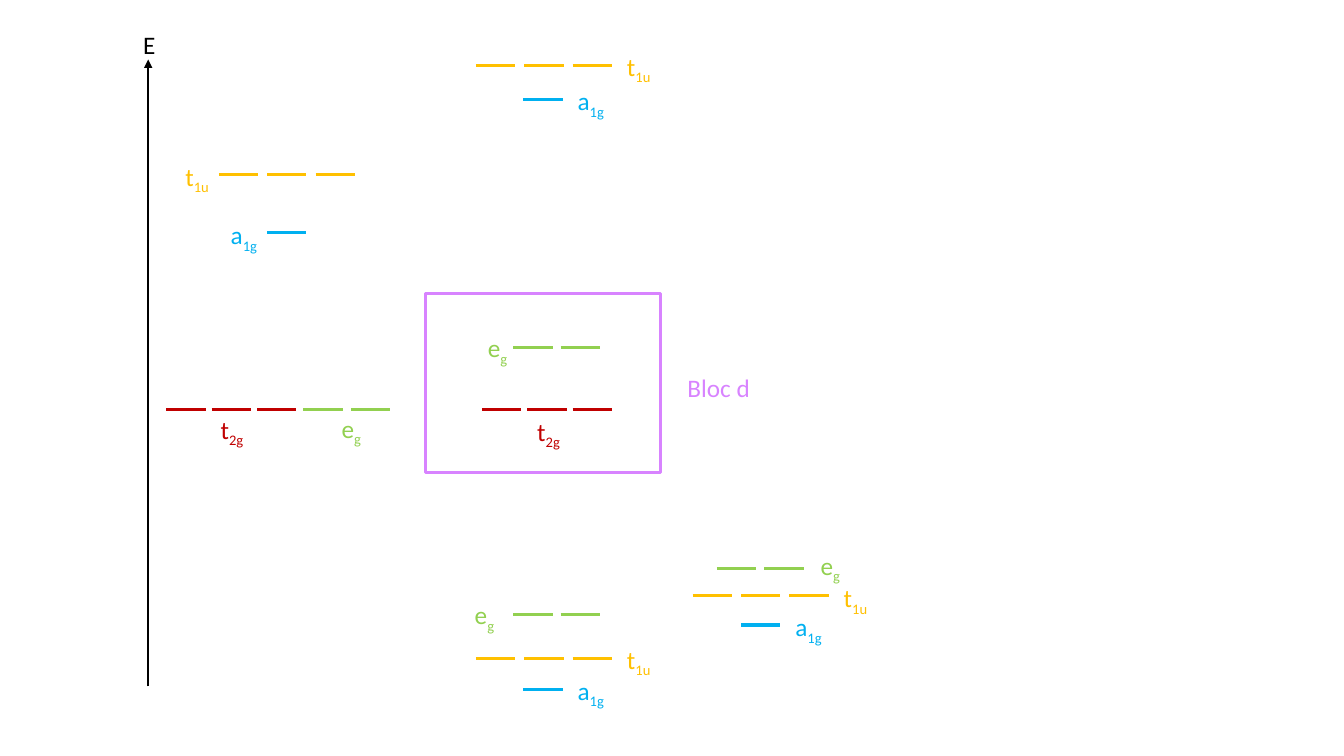
from enum import Enum
from typing import NamedTuple

from pptx import Presentation
from pptx.dml.color import RGBColor
from pptx.enum import shapes, text
from pptx.oxml import ns
from pptx.shapes import connector as c
from pptx.slide import Slide
from pptx.util import Inches, Pt
from lxml import etree

BLACK = RGBColor(0x00, 0x00, 0x00)
RED = RGBColor(0xC0, 0x00, 0x00)
GREEN = RGBColor(0x92, 0xD0, 0x50)
BLUE = RGBColor(0x00, 0xB0, 0xF0)
YELLOW = RGBColor(0xFF, 0xC0, 0x00)
PURPLE = RGBColor(0xD8, 0x83, 0xFF)

ORBITAL_LENGTH = 0.39
LABEL_HEIGHT = 0.4
LEVEL_WEIGHT = 2.25


class SymmetryStyle(NamedTuple):
    letter: str
    subscript: str
    color: RGBColor
    degeneracy: int
    pitch: float
    label_width: float


class Symmetry(Enum):
    A1G = SymmetryStyle("a", "1g", BLUE, 1, 0, 0.49)
    T1U = SymmetryStyle("t", "1u", YELLOW, 3, 0.48, 0.46)
    EG = SymmetryStyle("e", "g", GREEN, 2, 0.47, 0.41)
    T2G = SymmetryStyle("t", "2g", RED, 3, 0.45, 0.45)


class Level(NamedTuple):
    symmetry: Symmetry
    left: float
    energy_y: float
    label_left: float
    label_top: float


METAL_LEVELS = [
    Level(Symmetry.T1U, 2.17, 1.73, 1.74, 1.55),
    Level(Symmetry.A1G, 2.65, 2.31, 2.19, 2.13),
    Level(Symmetry.T2G, 1.65, 4.06, 2.09, 4.06),
    Level(Symmetry.EG, 3.01, 4.06, 3.29, 4.05),
]
COMPLEX_LEVELS = [
    Level(Symmetry.T1U, 4.72, 0.65, 6.12, 0.46),
    Level(Symmetry.A1G, 5.19, 0.99, 5.63, 0.8),
    Level(Symmetry.EG, 5.09, 3.45, 4.74, 3.25),
    Level(Symmetry.T2G, 4.78, 4.06, 5.23, 4.08),
    Level(Symmetry.EG, 5.09, 6.1, 4.61, 5.9),
    Level(Symmetry.T1U, 4.72, 6.53, 6.12, 6.34),
    Level(Symmetry.A1G, 5.19, 6.84, 5.63, 6.65),
]
LIGAND_LEVELS = [
    Level(Symmetry.EG, 7.11, 5.64, 8.04, 5.41),
    Level(Symmetry.T1U, 6.87, 5.91, 8.27, 5.73),
    Level(Symmetry.A1G, 7.35, 6.2, 7.79, 6.02),
]


def add_line(slide: Slide, start: tuple[float, float], end: tuple[float, float],
             color: RGBColor, weight: float) -> c.Connector:
    line = slide.shapes.add_connector(
        shapes.MSO_CONNECTOR.STRAIGHT, *map(Inches, start + end))
    line.line.color.rgb = color
    line.line.width = Pt(weight)
    etree.SubElement(line._element.spPr, ns.qn("a:effectLst"))
    return line


def add_label(slide: Slide, left: float, top: float, width: float,
              color: RGBColor, wording: str, subscript: str = "") -> None:
    box = slide.shapes.add_textbox(
        *map(Inches, (left, top, width, LABEL_HEIGHT)))
    frame = box.text_frame
    frame.word_wrap = False
    frame.auto_size = text.MSO_AUTO_SIZE.SHAPE_TO_FIT_TEXT
    paragraph = frame.paragraphs[0]
    paragraph.font.name = "Calibri"
    paragraph.font.size = Pt(18)
    paragraph.font.color.rgb = color
    paragraph.add_run().text = wording
    if subscript:
        run = paragraph.add_run()
        run.text = subscript
        run.font._element.set("baseline", "-25000")


def add_level(slide: Slide, level: Level) -> None:
    """Draw the degenerate orbitals of a level and its symmetry label."""
    style = level.symmetry.value
    for index in range(style.degeneracy):
        left = level.left + index * style.pitch
        add_line(slide, (left, level.energy_y),
                 (left + ORBITAL_LENGTH, level.energy_y),
                 style.color, LEVEL_WEIGHT)
    add_label(slide, level.label_left, level.label_top, style.label_width,
              style.color, style.letter, style.subscript)


def add_energy_axis(slide: Slide) -> None:
    axis = add_line(slide, (1.47, 6.81), (1.47, 0.59), BLACK, 1)
    etree.SubElement(axis.line._get_or_add_ln(), ns.qn("a:tailEnd"),
                     type="triangle")
    add_label(slide, 1.32, 0.24, 0.38, BLACK, "E")


def add_d_block(slide: Slide) -> None:
    frame = slide.shapes.add_shape(
        shapes.MSO_SHAPE.RECTANGLE, *map(Inches, (4.22, 2.91, 2.33, 1.78)))
    frame.shadow.inherit = False
    frame.fill.background()
    frame.line.color.rgb = PURPLE
    frame.line.width = Pt(LEVEL_WEIGHT)
    add_label(slide, 6.72, 3.64, 0.89, PURPLE, "Bloc d")


def main() -> None:
    presentation = Presentation()
    presentation.slide_width = Inches(13.33)
    presentation.slide_height = Inches(7.5)
    slide = presentation.slides.add_slide(presentation.slide_layouts[6])
    add_energy_axis(slide)
    for level in METAL_LEVELS + COMPLEX_LEVELS + LIGAND_LEVELS:
        add_level(slide, level)
    add_d_block(slide)
    presentation.save("out.pptx")


if __name__ == "__main__":
    main()
